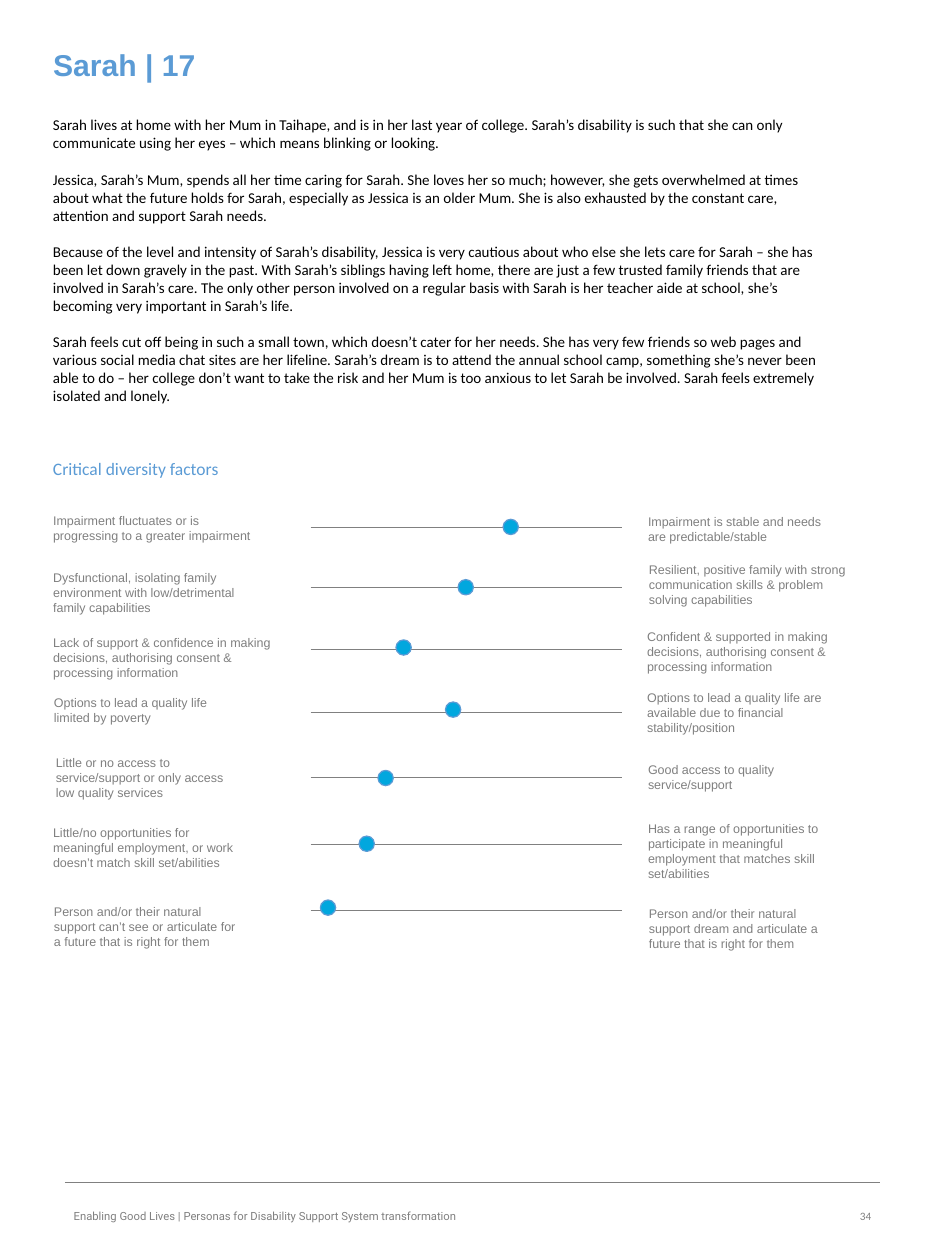
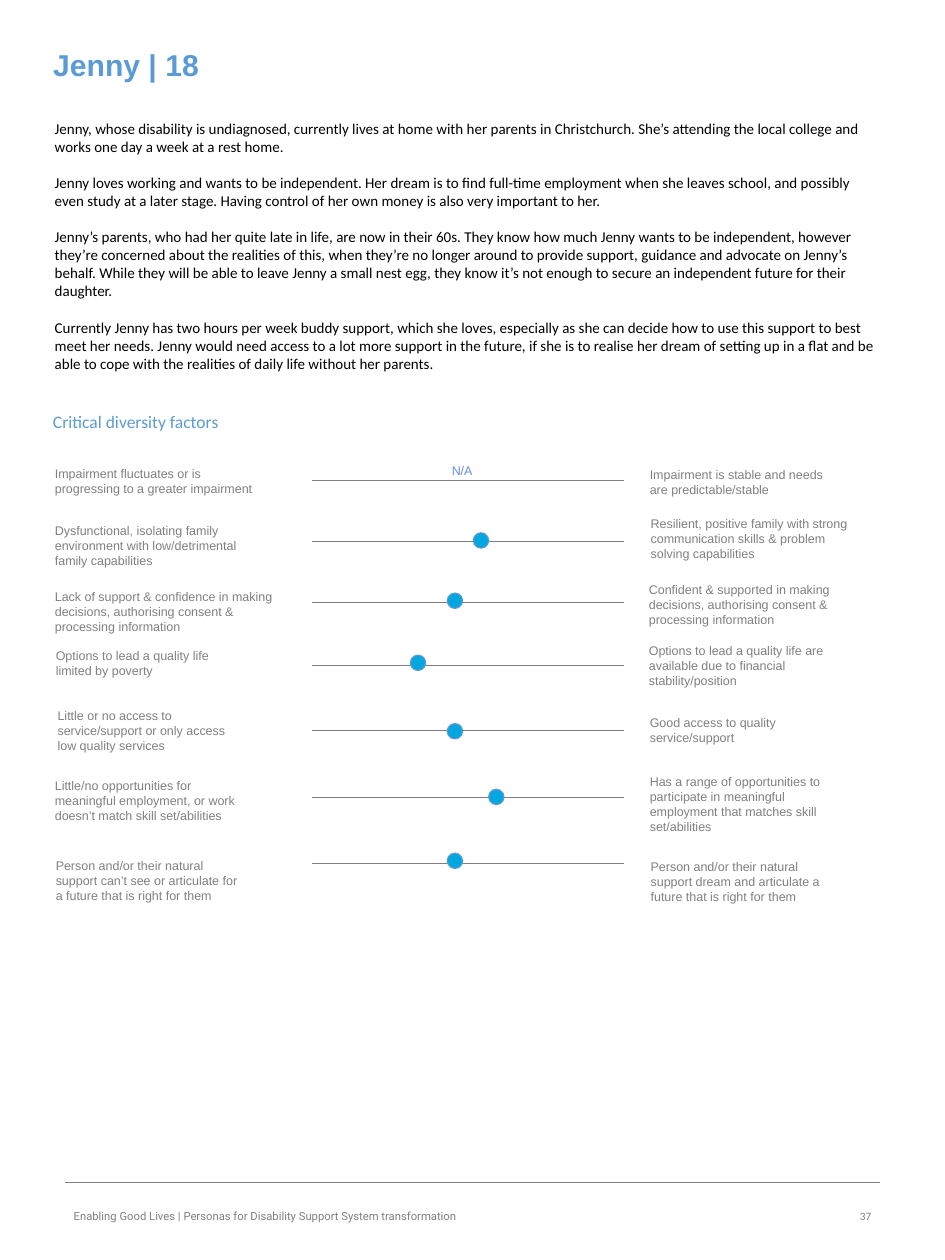
from dataclasses import dataclass
from typing import Optional

from lxml.etree import SubElement
from pptx import Presentation
from pptx.dml.color import RGBColor
from pptx.enum.shapes import MSO_CONNECTOR, MSO_SHAPE
from pptx.enum.text import MSO_ANCHOR as Anchor, MSO_AUTO_SIZE as AutoSize, PP_ALIGN as Align
from pptx.oxml.ns import qn
from pptx.shapes.autoshape import Shape
from pptx.shapes.shapetree import GroupShapes, SlideShapes
from pptx.slide import Slide
from pptx.text.text import TextFrame
from pptx.util import Inches, Pt

BLUE = "5B9BD5"
DOT_BLUE = "01A7DE"
NA_BLUE = "688EE8"
GREY = "808080"
BLACK = "000000"

TITLE_ONLY = 5
SCALE_LEFT, SCALE_RIGHT = 3.45, 6.91
DOT_SIZE = 0.17
FOOTER_TOP = 13.14
FOOTER = "Enabling Good Lives | Personas for Disability Support System transformation"


@dataclass(frozen=True)
class Font:
    name: str
    size: float
    color: str
    bold: bool = False


TITLE_FONT = Font("Arial", 24.1, BLUE, True)
BODY_FONT = Font("Calibri", 12, BLACK)
HEADING_FONT = Font("Calibri", 14, BLUE)
LABEL_FONT = Font("Arial", 10, GREY)
NA_FONT = Font("Arial", 10, NA_BLUE)
FOOTER_FONT = Font("Roboto", 9, GREY)
NUMBER_FONT = Font("Calibri", 9, GREY)


@dataclass(frozen=True)
class Box:
    left: float
    top: float
    width: float
    height: float

    def shifted(self, dx: float, dy: float) -> "Box":
        return Box(self.left + dx, self.top + dy, self.width, self.height)


@dataclass(frozen=True)
class Label:
    text: str
    box: Box


@dataclass(frozen=True)
class Factor:
    """One scale: its low and high labels, its line and the top of its dot."""
    low: Label
    high: Label
    line_y: float
    dot_top: float


@dataclass(frozen=True)
class Persona:
    title: str
    page: str
    story_box: Box
    story: tuple[str, ...]
    dx: float
    dy: float
    dots: tuple[Optional[float], ...]  # left of each dot, None where not applicable


FACTORS = (
    Factor(
        Label("Impairment fluctuates or is progressing to a greater impairment",
              Box(0.54, 5.65, 2.46, 0.44)),
        Label("Impairment is stable and needs are predictable/stable",
              Box(7.15, 5.66, 2.15, 0.44)),
        5.86, 5.77),
    Factor(
        Label("Dysfunctional, isolating family environment with low/detrimental\n"
              "family capabilities", Box(0.54, 6.28, 2.59, 0.61)),
        Label("Resilient, positive family with strong communication skills & problem \n"
              "solving capabilities", Box(7.16, 6.2, 2.59, 0.61)),
        6.53, 6.44),
    Factor(
        Label("Lack of support & confidence in making decisions, authorising consent "
              "& processing information", Box(0.54, 7.01, 2.57, 0.61)),
        Label("Confident & supported in making decisions, authorising consent "
              "& processing information", Box(7.14, 6.94, 2.57, 0.61)),
        7.21, 7.11),
    Factor(
        Label("Options to lead a quality life \nlimited by poverty",
              Box(0.55, 7.67, 2.53, 0.44)),
        Label("Options to lead a quality life are available due to financial "
              "stability/position", Box(7.14, 7.62, 2.53, 0.61)),
        7.91, 7.8),
    Factor(
        Label("Little or no access to service/support or only access \n"
              "low quality services", Box(0.57, 8.34, 2.24, 0.61)),
        Label("Good access to quality service/support", Box(7.15, 8.42, 1.71, 0.44)),
        8.64, 8.56),
    Factor(
        Label("Little/no opportunities for meaningful employment, or work "
              "doesn’t match skill set/abilities", Box(0.54, 9.12, 2.16, 0.61)),
        Label("Has a range of opportunities to participate in meaningful \n"
              "employment that matches skill set/abilities", Box(7.15, 9.07, 2.58, 0.77)),
        9.38, 9.29),
    Factor(
        Label("Person and/or their natural support can’t see or articulate for "
              "a future that is right for them", Box(0.55, 10, 2.16, 0.61)),
        Label("Person and/or their natural support dream and articulate "
              "a future that is right for them", Box(7.16, 10.02, 2.16, 0.61)),
        10.11, 10),
)

PERSONAS = (
    Persona(
        "Sarah | 17", "34", Box(0.49, 1.24, 8.75, 3.33),
        (
            "Sarah lives at home with her Mum in Taihape, and is in her last year of college. "
            "Sarah’s disability is such that she can only communicate using her eyes – which "
            "means blinking or looking.",
            "Jessica, Sarah’s Mum, spends all her time caring for Sarah. She loves her so much; "
            "however, she gets overwhelmed at times about what the future holds for Sarah, "
            "especially as Jessica is an older Mum. She is also exhausted by the constant care, "
            "attention and support Sarah needs.",
            "Because of the level and intensity of Sarah’s disability, Jessica is very cautious "
            "about who else she lets care for Sarah – she has been let down gravely in the past. "
            "With Sarah’s siblings having left home, there are just a few trusted family friends "
            "that are involved in Sarah’s care. The only other person involved on a regular basis "
            "with Sarah is her teacher aide at school, she’s becoming very important in Sarah’s "
            "life.",
            "Sarah feels cut off being in such a small town, which doesn’t cater for her needs. "
            "She has very few friends so web pages and various social media chat sites are her "
            "lifeline. Sarah’s dream is to attend the annual school camp, something she’s never "
            "been able to do – her college don’t want to take the risk and her Mum is too anxious "
            "to let Sarah be involved. Sarah feels extremely isolated and lonely.",
        ),
        0, 0, (5.59, 5.09, 4.4, 4.95, 4.2, 3.99, 3.56)),
    Persona(
        "Jenny | 18", "37", Box(0.51, 1.28, 9.38, 2.93),
        (
            "Jenny, whose disability is undiagnosed, currently lives at home with her parents in "
            "Christchurch. She’s attending the local college and works one day a week at a rest "
            "home.",
            "Jenny loves working and wants to be independent. Her dream is to find full-time "
            "employment when she leaves school, and possibly even study at a later stage. Having "
            "control of her own money is also very important to her.",
            "Jenny’s parents, who had her quite late in life, are now in their 60s. They know how "
            "much Jenny wants to be independent, however they’re concerned about the realities of "
            "this, when they’re no longer around to provide support, guidance and advocate on "
            "Jenny’s behalf. While they will be able to leave Jenny a small nest egg, they know "
            "it’s not enough to secure an independent future for their daughter.",
            "Currently Jenny has two hours per week buddy support, which she loves, especially as "
            "she can decide how to use this support to best meet her needs. Jenny would need "
            "access to a lot more support in the future, if she is to realise her dream of "
            "setting up in a flat and be able to cope with the realities of daily life without "
            "her parents.",
        ),
        0.02, -0.52, (None, 5.26, 4.97, 4.56, 4.97, 5.43, 4.97)),
)


def rgb(color: str) -> RGBColor:
    return RGBColor.from_string(color)


def place(sp: Shape, box: Box) -> None:
    sp.left, sp.top = Inches(box.left), Inches(box.top)
    sp.width, sp.height = Inches(box.width), Inches(box.height)


def write(tf: TextFrame, paragraphs: tuple[str, ...], font: Font,
          align: Align = Align.LEFT, gap: float = 0) -> None:
    """Fill a frame, with a gap in points between paragraphs and breaks at newlines."""
    for i, text in enumerate(paragraphs):
        p = tf.add_paragraph() if i else tf.paragraphs[0]
        p.alignment = align
        if i and gap:
            p.space_before = Pt(gap)
        for j, line in enumerate(text.split("\n")):
            if j:
                p.add_line_break()
            r = p.add_run()
            r.text = line
            r.font.name, r.font.size, r.font.bold = font.name, Pt(font.size), font.bold
            r.font.color.rgb = rgb(font.color)


def add_text(shapes: SlideShapes | GroupShapes, box: Box, font: Font, *paragraphs: str,
             align: Align = Align.LEFT, gap: float = 0, wrap: bool = True,
             grow: bool = True, inset: Optional[float] = None) -> TextFrame:
    tf = shapes.add_textbox(Inches(box.left), Inches(box.top),
                            Inches(box.width), Inches(box.height)).text_frame
    tf.word_wrap = wrap
    tf.auto_size = AutoSize.SHAPE_TO_FIT_TEXT if grow else AutoSize.NONE
    if inset is not None:
        tf.margin_left = tf.margin_right = tf.margin_top = tf.margin_bottom = Inches(inset)
    write(tf, paragraphs, font, align, gap)
    return tf


def add_rule(shapes: SlideShapes | GroupShapes, left: float, right: float,
             y: float, weight: float) -> None:
    """Draw a thin grey horizontal line."""
    rule = shapes.add_connector(MSO_CONNECTOR.STRAIGHT, Inches(left), Inches(y),
                                Inches(right), Inches(y))
    rule.line.color.rgb = rgb(GREY)
    rule.line.width = Pt(weight)
    SubElement(rule._element.spPr, qn("a:effectLst"))


def add_dot(shapes: GroupShapes, left: float, top: float) -> None:
    dot = shapes.add_shape(MSO_SHAPE.OVAL, Inches(left), Inches(top),
                           Inches(DOT_SIZE), Inches(DOT_SIZE))
    dot.shadow.inherit = False
    dot.fill.solid()
    dot.fill.fore_color.rgb = rgb(DOT_BLUE)
    dot.line.color.rgb = rgb(BLUE)
    dot.line.width = Pt(1)


def add_title(s: Slide, text: str) -> None:
    title = s.shapes.title
    place(title, Box(0.49, 0.46, 9.07, 0.51))
    tf = title.text_frame
    tf.vertical_anchor = Anchor.TOP
    tf.auto_size = AutoSize.SHAPE_TO_FIT_TEXT
    write(tf, (text,), TITLE_FONT)


def add_footer(s: Slide, page: str) -> None:
    add_rule(s.shapes, 0.72, 9.78, FOOTER_TOP, 0.25)
    footer = add_text(s.shapes, Box(0.72, FOOTER_TOP, 6.22, 0.74), FOOTER_FONT, FOOTER,
                      grow=False)
    number = add_text(s.shapes, Box(7.42, FOOTER_TOP, 2.36, 0.75), NUMBER_FONT, page,
                      align=Align.RIGHT, grow=False)
    footer.vertical_anchor = number.vertical_anchor = Anchor.MIDDLE


def add_factors(s: Slide, persona: Persona) -> None:
    dx, dy = persona.dx, persona.dy
    add_text(s.shapes, Box(0.49, 5.04 + dy, 2.06, 0.34), HEADING_FONT,
             "Critical diversity factors", wrap=False)
    shapes = s.shapes.add_group_shape().shapes
    for factor, dot_left in zip(FACTORS, persona.dots):
        for label in (factor.low, factor.high):
            add_text(shapes, label.box.shifted(dx, dy), LABEL_FONT, label.text, inset=0.05)
        add_rule(shapes, SCALE_LEFT + dx, SCALE_RIGHT + dx, factor.line_y + dy, 0.5)
        if dot_left is None:
            add_text(shapes, Box(4.97, factor.line_y + dy - 0.25, 0.36, 0.27), NA_FONT,
                     "N/A", inset=0.05)
        else:
            add_dot(shapes, dot_left, factor.dot_top + dy)


def add_persona(prs: Presentation, persona: Persona) -> None:
    s = prs.slides.add_slide(prs.slide_layouts[TITLE_ONLY])
    add_title(s, persona.title)
    add_text(s.shapes, persona.story_box, BODY_FONT, *persona.story, gap=14.5)
    add_factors(s, persona)
    add_footer(s, persona.page)


def main() -> None:
    prs = Presentation()
    prs.slide_width, prs.slide_height = Inches(10.5), Inches(14)
    for persona in PERSONAS:
        add_persona(prs, persona)
    prs.save("out.pptx")


if __name__ == "__main__":
    main()
